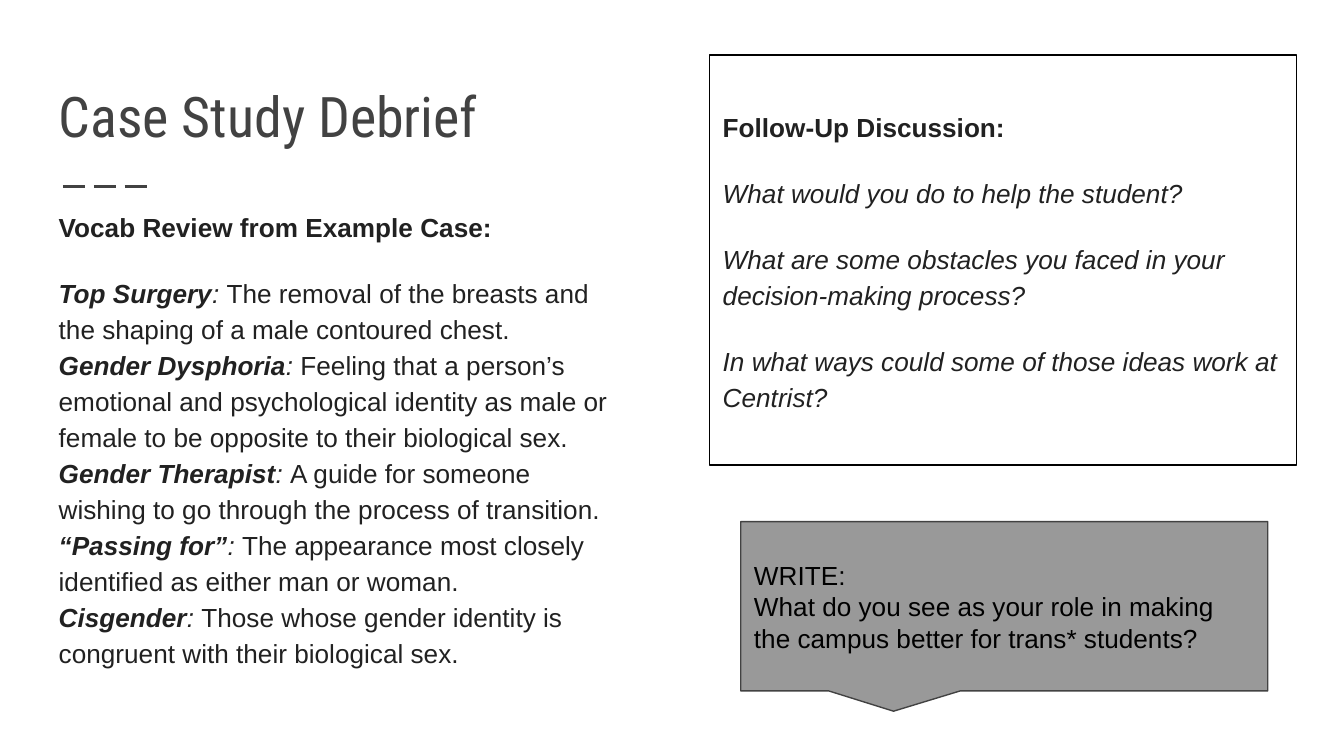
from dataclasses import dataclass

from lxml import etree
from pptx import Presentation
from pptx.dml.color import RGBColor
from pptx.enum.dml import MSO_LINE
from pptx.enum.shapes import MSO_CONNECTOR, MSO_SHAPE
from pptx.enum.text import MSO_ANCHOR, MSO_AUTO_SIZE, PP_ALIGN
from pptx.oxml.ns import qn
from pptx.util import Cm, Pt

TOP, MIDDLE, BOTTOM = MSO_ANCHOR.TOP, MSO_ANCHOR.MIDDLE, MSO_ANCHOR.BOTTOM
LEFT = PP_ALIGN.LEFT
NO_FIT = MSO_AUTO_SIZE.NONE
RECT, CALLOUT = MSO_SHAPE.RECTANGLE, MSO_SHAPE.RECTANGULAR_CALLOUT
STRAIGHT = MSO_CONNECTOR.STRAIGHT
LONG_DASH = MSO_LINE.LONG_DASH


@dataclass(frozen=True)
class Theme:
    head_font: str = "Roboto Condensed"
    body_font: str = "Arial"
    head_size: int = 30
    body_size: int = 14
    head: RGBColor = RGBColor(0x42, 0x42, 0x42)
    text: RGBColor = RGBColor(0x21, 0x21, 0x21)
    black: RGBColor = RGBColor(0, 0, 0)
    grey: RGBColor = RGBColor(0x99, 0x99, 0x99)
    inset: float = 0.25
    spacing: float = 1.15
    gap: int = 16


class Deck:
    def __init__(self, theme):
        self.theme = theme
        self.file = Presentation()
        self.file.slide_width, self.file.slide_height = Cm(25.4), Cm(14.29)
        self.slide = self.file.slides.add_slide(self.file.slide_layouts[5])

    def frame(self, shape, anchor):
        frame = shape.text_frame
        frame.word_wrap = True
        frame.auto_size = NO_FIT
        frame.vertical_anchor = anchor
        frame.margin_left = frame.margin_right = Cm(self.theme.inset)
        frame.margin_top = frame.margin_bottom = Cm(self.theme.inset)
        return frame

    def style(self, para, color, name=None, size=None):
        para.alignment = LEFT
        para.font.name = name or self.theme.body_font
        para.font.size = Pt(size or self.theme.body_size)
        para.font.color.rgb = color

    def title(self, text, box):
        shape = self.slide.shapes.title
        shape.left, shape.top, shape.width, shape.height = map(Cm, box)
        frame = self.frame(shape, BOTTOM)
        frame.text = text
        self.style(frame.paragraphs[0], self.theme.head,
                   self.theme.head_font, self.theme.head_size)

    def dashes(self, x, y, width):
        line = self.slide.shapes.add_connector(
            STRAIGHT, Cm(x), Cm(y), Cm(x + width), Cm(y))
        line.line.color.rgb = self.theme.head
        line.line.width = Pt(1.5)
        line.line.dash_style = LONG_DASH
        etree.SubElement(line._element.spPr, qn("a:effectLst"))

    def text(self, box):
        return self.frame(self.slide.shapes.add_textbox(*map(Cm, box)), TOP)

    def panel(self, kind, box, line, fill=None, tip=()):
        shape = self.slide.shapes.add_shape(kind, *map(Cm, box))
        shape.shadow.inherit = False
        if fill is None:
            shape.fill.background()
        else:
            shape.fill.solid()
            shape.fill.fore_color.rgb = fill
        shape.line.color.rgb = line
        shape.line.width = Pt(0.75)
        for i, value in enumerate(tip):
            shape.adjustments[i] = value
        return self.frame(shape, MIDDLE)

    def para(self, frame, color, text="", bold=None, italic=None,
             spacing=None, after=0):
        first = frame.paragraphs[0]
        para = frame.add_paragraph() if first.runs else first
        self.style(para, color)
        para.font.bold, para.font.italic = bold, italic
        para.line_spacing = spacing
        para.space_after = Pt(after)
        if text:
            para.add_run().text = text
        return para

    def term(self, frame, word, meaning):
        para = self.para(frame, self.theme.text, spacing=self.theme.spacing)
        for text, bold, italic in ((word, True, True), (": ", False, True),
                                   (meaning, False, False)):
            run = para.add_run()
            run.text = text
            run.font.bold, run.font.italic = bold, italic


TERMS = [
    ("Top Surgery", "The removal of the breasts and the shaping of a male "
     "contoured chest."),
    ("Gender Dysphoria", "Feeling that a person’s emotional and psychological "
     "identity as male or female to be opposite to their biological sex."),
    ("Gender Therapist", "A guide for someone wishing to go through the "
     "process of transition."),
    ("“Passing for”", "The appearance most closely identified as either man "
     "or woman."),
    ("Cisgender", "Those whose gender identity is congruent with their "
     "biological sex."),
]
ASKS = [
    "What would you do to help the student?",
    "What are some obstacles you faced in your decision-making process?",
    "In what ways could some of those ideas work at Centrist?",
]
TASK = [
    "WRITE:",
    "What do you see as your role in making the campus better for "
    "trans* students?",
]


def main():
    theme = Theme()
    deck = Deck(theme)
    loose = {"spacing": theme.spacing, "after": theme.gap}

    # Heading
    deck.dashes(1.19, 3.53, 1.7)
    deck.title("Case Study Debrief", (0.86, 1.04, 23.67, 2.03))

    # Vocabulary
    vocab = deck.text((0.86, 3.66, 11.1, 9.02))
    deck.para(vocab, theme.text, "Vocab Review from Example Case:",
              bold=True, **loose)
    for word, meaning in TERMS:
        deck.term(vocab, word, meaning)

    # Discussion questions
    talk = deck.panel(RECT, (13.41, 1.04, 11.1, 7.75), theme.black)
    deck.para(talk, theme.text, "Follow-Up Discussion:", bold=True, **loose)
    for ask in ASKS:
        deck.para(talk, theme.text, ask, italic=True, **loose)

    # Writing task
    task = deck.panel(CALLOUT, (14, 9.86, 9.96, 3.2), theme.head,
                      theme.grey, (-0.21, 0.62))
    for line in TASK:
        deck.para(task, theme.black, line)

    deck.file.save("out.pptx")


if __name__ == "__main__":
    main()
